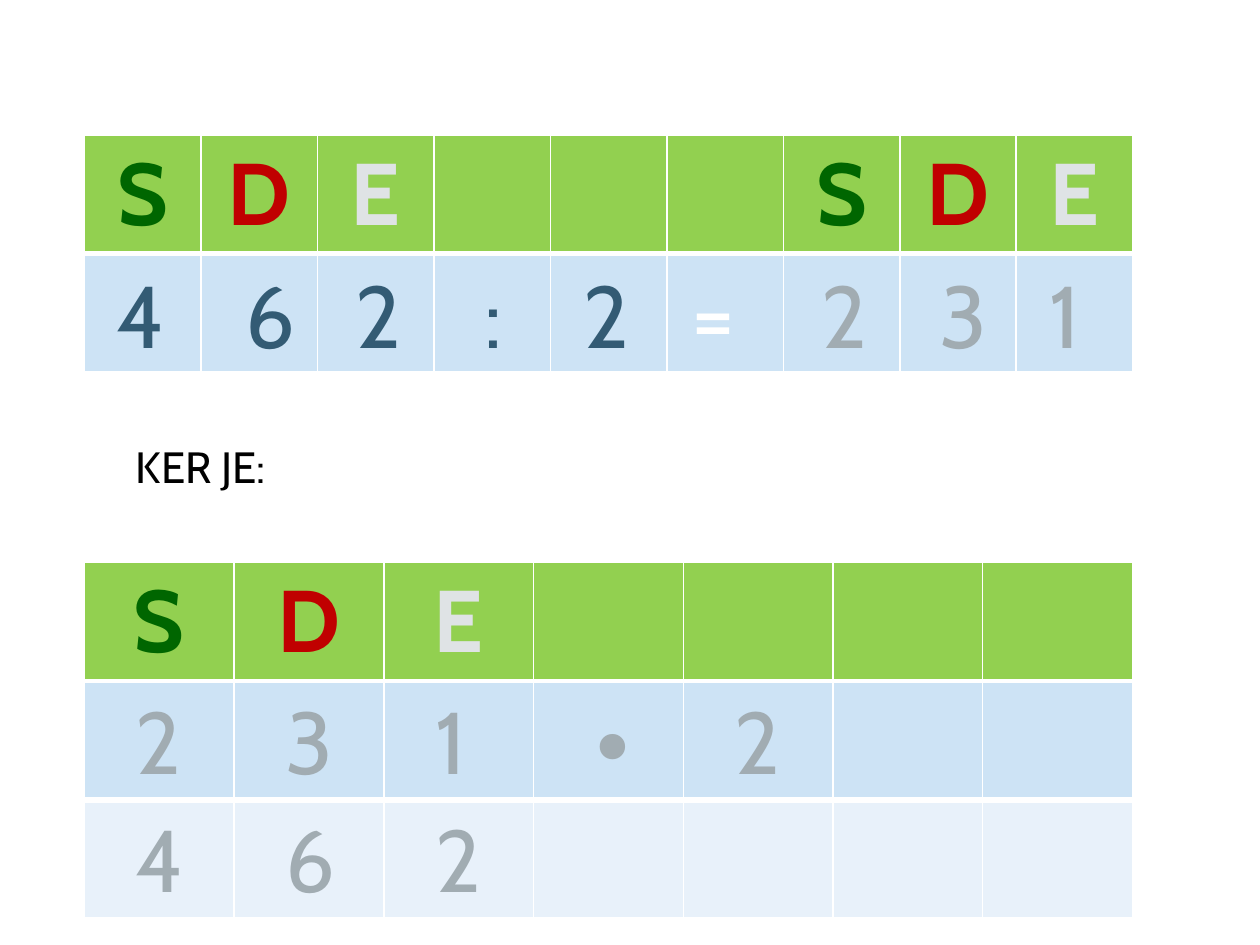
from lxml.etree import SubElement
from pptx import Presentation
from pptx.dml.color import RGBColor
from pptx.enum.shapes import MSO_CONNECTOR as Connector
from pptx.enum.text import MSO_AUTO_SIZE as AutoSize, PP_ALIGN as Align
from pptx.oxml.ns import qn
from pptx.util import Inches, Pt

FONT = "Cabin"
WHITE, BLACK, GREEN = "FFFFFF", "000000", "92D050"
BLUE, PALE = "CDE3F5", "E8F1FA"
TASK, ANSWER = "335B74", "A1ACB2"
PLACES = {"S": "006600", "D": "C00000", "E": "DFE3E5"}

# Grid shared by both tables
LEFT, WIDTH, ROW = 0.67, 8.32, 0.94
TOP_DIVISION, TOP_CHECK = 1.07, 4.46
DIGIT_WIDTH = 0.55


def color(value):
    return RGBColor.from_string(value)


def add_run(p, text, hex_color, size=50, bold=False):
    r = p.add_run()
    r.text = text
    for name, value in dict(name=FONT, size=Pt(size), bold=bold).items():
        setattr(r.font, name, value)
    r.font.color.rgb = color(hex_color)


def set_borders(cell, bottom):
    tc_pr = cell._tc.get_or_add_tcPr()
    for side, width in dict(L=1, R=1, T=1, B=bottom).items():
        ln = SubElement(tc_pr, qn(f"a:ln{side}"), w=str(Pt(width)))
        fill = SubElement(ln, qn("a:solidFill"))
        SubElement(fill, qn("a:srgbClr"), val=WHITE)


def add_place_table(s, top, header, fills):
    """Table with place letters on top and one plain row per further fill."""
    rows, cols = len(fills), len(header)
    table = s.shapes.add_table(rows, cols, Inches(LEFT), Inches(top),
                               Inches(WIDTH), Inches(ROW * rows)).table
    for column in table.columns:
        column.width = Inches(WIDTH / cols)
    for i, fill in enumerate(fills):
        table.rows[i].height = Inches(ROW)
        for j, letter in enumerate(header):
            cell = table.cell(i, j)
            set_borders(cell, bottom=1 if i else 3)
            cell.fill.solid()
            cell.fill.fore_color.rgb = color(fill)
            if i == 0 and letter in PLACES:
                p = cell.text_frame.paragraphs[0]
                p.alignment = Align.CENTER
                add_run(p, letter, PLACES[letter], bold=True)


def add_text(s, text, left, top, hex_color, width=DIGIT_WIDTH, height=ROW, size=50):
    box = s.shapes.add_textbox(*map(Inches, (left, top, width, height)))
    tf = box.text_frame
    for name, value in dict(word_wrap=True, auto_size=AutoSize.SHAPE_TO_FIT_TEXT).items():
        setattr(tf, name, value)
    add_run(tf.paragraphs[0], text, hex_color, size)


def add_digits(s, top, digits, hex_color):
    for text, left in digits:
        add_text(s, text, left, top, hex_color)


def add_rule(s, left, right, y):
    line = s.shapes.add_connector(Connector.STRAIGHT,
                                  *map(Inches, (left, y, right, y)))
    line.line.color.rgb = color(WHITE)
    line.line.width = Pt(3)
    SubElement(line._element.spPr, qn("a:effectLst"))


def main():
    prs = Presentation()
    prs.slide_width, prs.slide_height = Inches(10), Inches(7.5)
    s = prs.slides.add_slide(prs.slide_layouts[6])

    # Place-value tables; a dash marks a column without a place letter
    add_place_table(s, TOP_DIVISION, "SDE---SDE", [GREEN, BLUE])
    add_place_table(s, TOP_CHECK, "SDE----", [GREEN, BLUE, PALE])

    # Division: task, equals sign and quotient
    row = TOP_DIVISION + ROW + 0.01
    add_digits(s, row, [("4", 0.83), ("6", 1.85), ("2", 2.72), (":", 3.75), ("2", 4.53)], TASK)
    add_digits(s, row, [("=", 5.39)], WHITE)
    add_digits(s, row, [("2", 6.42), ("3", 7.36), ("1", 8.23)], ANSWER)

    # Check by multiplication
    add_text(s, "KER JE:", 0.98, 3.44, BLACK, width=1.87, height=0.52, size=25)
    row = TOP_CHECK + ROW
    step = WIDTH / 7
    add_digits(s, row, [(c, 0.98 + i * step) for i, c in enumerate("231∙2")], ANSWER)
    add_rule(s, 0.5, 9.32, row + ROW + 0.01)
    add_digits(s, row + ROW, [(c, 0.98 + i * step) for i, c in enumerate("462")], ANSWER)

    prs.save("out.pptx")


if __name__ == "__main__":
    main()
